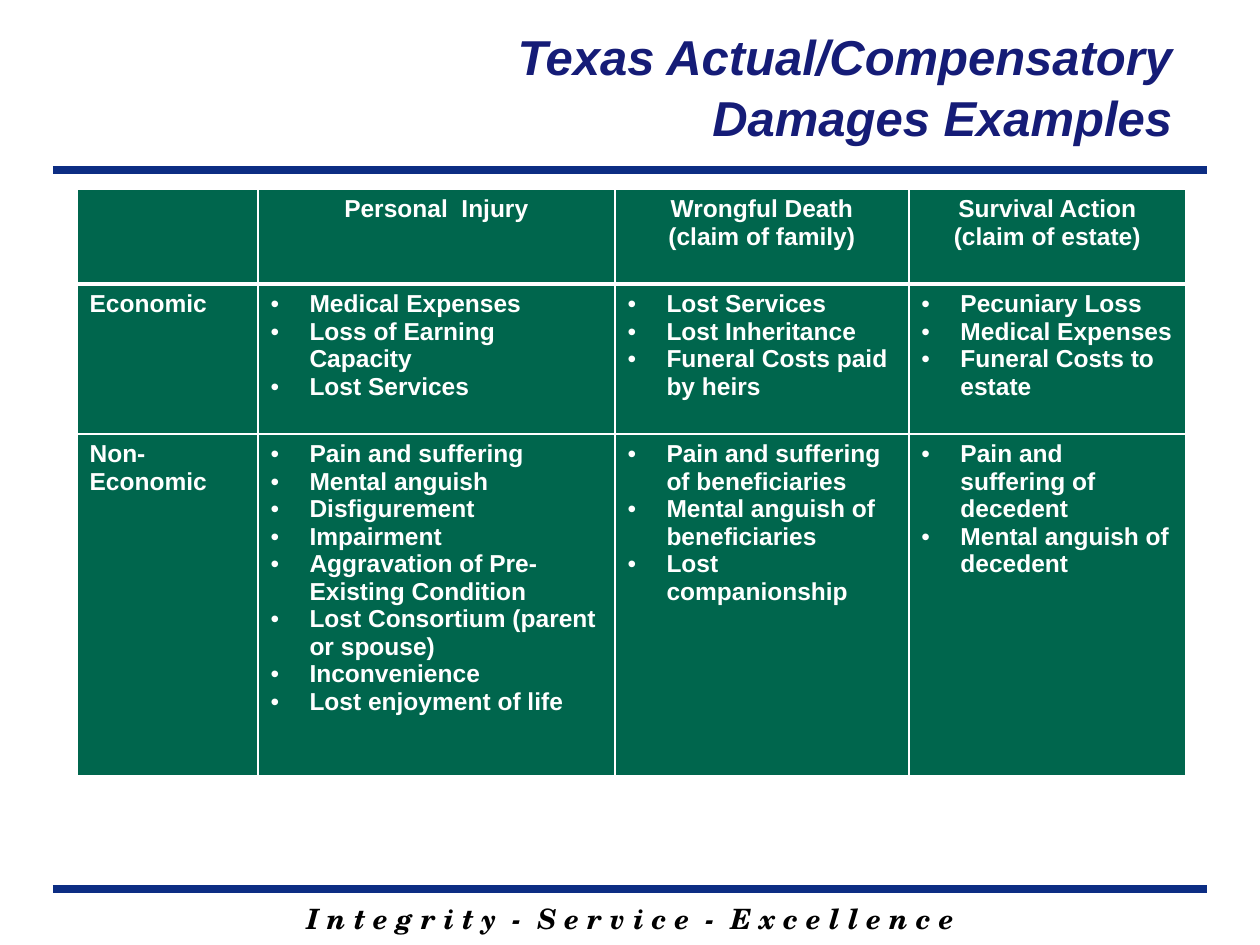
import pptx
import pptx.dml.color
import pptx.enum.shapes
import pptx.enum.text
import pptx.oxml
import pptx.oxml.ns
import pptx.util
from dataclasses import dataclass

ALIGN = pptx.enum.text.PP_ALIGN
ANCHOR = pptx.enum.text.MSO_ANCHOR


@dataclass(frozen=True)
class Theme:
    title: str = "151C77"
    rule: str = "0C2D83"
    cell: str = "00664D"
    light: str = "FFFFFF"
    dark: str = "000000"
    sans: str = "Arial"
    serif: str = "TeX Gyre Schola"
    title_size: int = 28
    motto_size: int = 16
    cell_size: int = 14
    rule_width: float = 4.5


THEME = Theme()
SLIDE_SIZE = (1260, 945)
TITLE = ["Texas Actual/Compensatory", "Damages Examples"]
MOTTO = ["I n t e g r i t y  -  S e r v i c e  -  E x c e l l e n c e"]
COLUMN_WIDTHS = [181, 357, 294, 277]
HEADER = [[], ["Personal  Injury"],
          ["Wrongful Death", "(claim of family)"],
          ["Survival Action", "(claim of estate)"]]
ECONOMIC = [
    ["Economic"],
    ["Medical Expenses", "Loss of Earning Capacity", "Lost Services"],
    ["Lost Services", "Lost Inheritance", "Funeral Costs paid by heirs"],
    ["Pecuniary Loss", "Medical Expenses", "Funeral Costs to estate"],
]
NON_ECONOMIC = [
    ["Non-Economic"],
    ["Pain and suffering", "Mental anguish", "Disfigurement", "Impairment",
     "Aggravation of Pre-Existing Condition",
     "Lost Consortium (parent or spouse)", "Inconvenience",
     "Lost enjoyment of life"],
    ["Pain and suffering of beneficiaries", "Mental anguish of beneficiaries",
     "Lost companionship"],
    ["Pain and suffering of decedent", "Mental anguish of decedent"],
]
ROWS = [(95, HEADER), (150, ECONOMIC), (342, NON_ECONOMIC)]
TABLE_LEFT, TABLE_TOP = 77, 189
RULE_LEFT, RULE_RIGHT, RULE_TOPS = 53, 1207, (170, 889)
BULLET_INDENT = 39


def px(length):
    return pptx.util.Emu(length * 914400 // 126)


def color(value):
    return pptx.dml.color.RGBColor.from_string(value)


def add_xml(parent, markup):
    namespace = pptx.oxml.ns.nsdecls("a")
    parent.append(pptx.oxml.parse_xml(markup.format(ns=namespace)))


def write(frame, lines, *, size, ink, font=THEME.sans, italic=False,
          align=ALIGN.LEFT, bullet=False, gap=0):
    frame.word_wrap = True
    for index, line in enumerate(lines):
        paragraph = frame.paragraphs[0] if index == 0 else frame.add_paragraph()
        paragraph.alignment = align
        paragraph.space_before = pptx.util.Pt(gap if index else 0)
        if bullet:
            properties = paragraph._p.get_or_add_pPr()
            properties.set("marL", str(px(BULLET_INDENT)))
            properties.set("indent", str(-px(BULLET_INDENT)))
            add_xml(properties, '<a:buFont {ns} typeface="Arial"/>')
            add_xml(properties, '<a:buChar {ns} char="•"/>')
        run = paragraph.add_run()
        run.text = line
        run.font.name = font
        run.font.size = pptx.util.Pt(size)
        run.font.bold = True
        run.font.italic = italic
        run.font.color.rgb = color(ink)


def add_rule(slide, top):
    rule = slide.shapes.add_connector(
        pptx.enum.shapes.MSO_CONNECTOR.STRAIGHT,
        px(RULE_LEFT), px(top), px(RULE_RIGHT), px(top))
    rule.line.color.rgb = color(THEME.rule)
    rule.line.width = pptx.util.Pt(THEME.rule_width)
    add_xml(rule._element.spPr, "<a:effectLst {ns}/>")


def add_title(slide):
    title = slide.shapes.title
    title.left, title.top, title.width, title.height = map(px, (441, 32, 757, 158))
    frame = title.text_frame
    frame.auto_size = pptx.enum.text.MSO_AUTO_SIZE.NONE
    frame.vertical_anchor = ANCHOR.MIDDLE
    frame.margin_top, frame.margin_bottom, frame.margin_right = 0, px(49), px(26)
    write(frame, TITLE, size=THEME.title_size, ink=THEME.title, italic=True,
          align=ALIGN.RIGHT, gap=1.5)


def add_motto(slide):
    box = slide.shapes.add_textbox(*map(px, (179, 895, 903, 47)))
    box.text_frame.vertical_anchor = ANCHOR.MIDDLE
    write(box.text_frame, MOTTO, size=THEME.motto_size, ink=THEME.dark,
          font=THEME.serif, italic=True, align=ALIGN.CENTER)


def style_cell(cell, heavy_sides):
    properties = cell._tc.get_or_add_tcPr()
    for side in "LRTB":
        width = pptx.util.Pt(3 if side in heavy_sides else 1)
        add_xml(properties, f'<a:ln{side} {{ns}} w="{width}"><a:solidFill>'
                f'<a:srgbClr val="{THEME.light}"/></a:solidFill></a:ln{side}>')
    cell.fill.solid()
    cell.fill.fore_color.rgb = color(THEME.cell)


def add_damages_table(slide):
    table = slide.shapes.add_table(
        len(ROWS), len(COLUMN_WIDTHS), px(TABLE_LEFT), px(TABLE_TOP),
        px(sum(COLUMN_WIDTHS)), px(sum(height for height, _ in ROWS))).table
    for column, width in zip(table.columns, COLUMN_WIDTHS):
        column.width = px(width)
    for row_index, (height, entries) in enumerate(ROWS):
        table.rows[row_index].height = px(height)
        for column_index, lines in enumerate(entries):
            cell = table.cell(row_index, column_index)
            style_cell(cell, {0: "B", 1: "T"}.get(row_index, ""))
            is_header = row_index == 0
            write(cell.text_frame, lines, size=THEME.cell_size, ink=THEME.light,
                  align=ALIGN.CENTER if is_header else ALIGN.LEFT,
                  bullet=not is_header and column_index > 0)


def main():
    presentation = pptx.Presentation()
    presentation.slide_width, presentation.slide_height = map(px, SLIDE_SIZE)
    slide = presentation.slides.add_slide(presentation.slide_layouts[5])
    add_motto(slide)
    for top in RULE_TOPS:
        add_rule(slide, top)
    add_title(slide)
    add_damages_table(slide)
    presentation.save("out.pptx")


if __name__ == "__main__":
    main()
